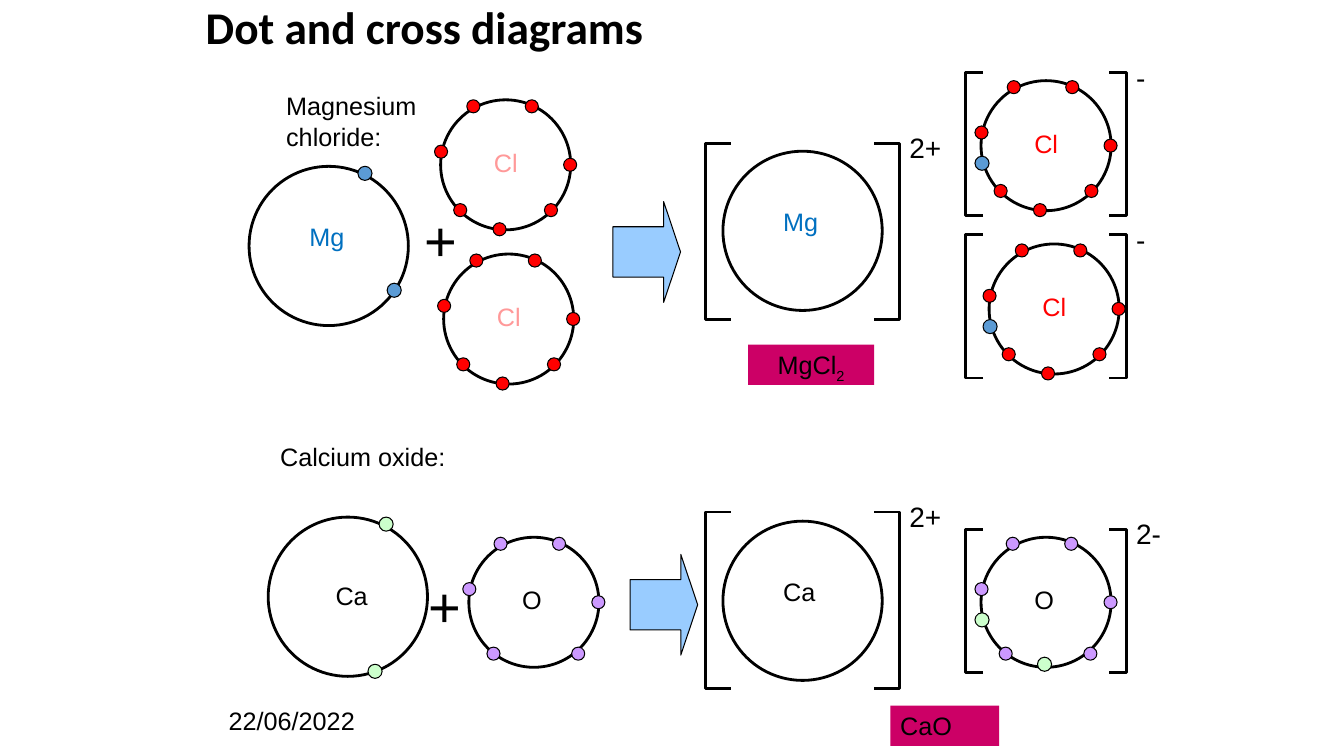
"""Build a slide of dot and cross diagrams for two ionic compounds."""
from dataclasses import dataclass

from pptx import Presentation
from pptx.dml.color import RGBColor
from pptx.enum.shapes import MSO_SHAPE
from pptx.enum.text import MSO_ANCHOR, MSO_AUTO_SIZE, PP_ALIGN
from pptx.util import Inches, Pt

OVAL = MSO_SHAPE.OVAL
RECTANGLE = MSO_SHAPE.RECTANGLE
ARROW = MSO_SHAPE.RIGHT_ARROW
LEFT_BRACKET = MSO_SHAPE.LEFT_BRACKET
RIGHT_BRACKET = MSO_SHAPE.RIGHT_BRACKET
TOP, MIDDLE = MSO_ANCHOR.TOP, MSO_ANCHOR.MIDDLE
LEFT, CENTER = PP_ALIGN.LEFT, PP_ALIGN.CENTER
NO_AUTOFIT = MSO_AUTO_SIZE.NONE

BLACK, RED, PINK, BLUE = "000000", "FF0000", "FF9999", "0070C0"
MAGNESIUM_DOT, CALCIUM_DOT, OXYGEN_DOT = "5B9BD5", "CCFFCC", "CC99FF"
ARROW_FILL, FORMULA_FILL = "99CCFF", "CC0066"

METAL_RING, NONMETAL_RING = 1.58, 1.29
METAL_ELECTRON, NONMETAL_ELECTRON = 0.14, 0.13


@dataclass(frozen=True)
class Electrons:
    """Electrons of one colour, placed from the top left of their ring."""

    color: str
    size: float
    offsets: tuple[tuple[float, float], ...]


@dataclass(frozen=True)
class Atom:
    """A ring with its symbol and its electrons."""

    left: float
    top: float
    ring: float
    symbol: str
    color: str
    label_offset: tuple[float, float]
    electrons: tuple[Electrons, ...] = ()


@dataclass(frozen=True)
class Brackets:
    """A pair of square brackets with a charge at the upper right."""

    left: float
    top: float
    right: float
    width: float
    height: float
    charge: str


@dataclass(frozen=True)
class Caption:
    """A piece of text in a box, on a fill if one is given."""

    text: str
    box: tuple[float, float, float, float]
    size: float = 18
    anchor: MSO_ANCHOR = TOP
    align: PP_ALIGN = LEFT
    fill: str | None = None
    subscript: str = ""


CHLORINE = Electrons(RED, NONMETAL_ELECTRON, (
    (0.26, 0), (0.84, 0), (-0.06, 0.45), (0.13, 1.03), (1.03, 1.03), (1.22, 0.58), (0.52, 1.22)))
OXYGEN = Electrons(OXYGEN_DOT, NONMETAL_ELECTRON, (
    (0.25, 0), (0.83, 0), (-0.06, 0.45), (0.18, 1.09), (1.02, 1.09), (1.22, 0.58)))
MAGNESIUM = Electrons(MAGNESIUM_DOT, METAL_ELECTRON, ((1.08, 0), (1.37, 1.16)))
CALCIUM = Electrons(CALCIUM_DOT, METAL_ELECTRON, ((1.1, 0), (0.99, 1.46)))
FROM_MAGNESIUM = Electrons(MAGNESIUM_DOT, METAL_ELECTRON, ((-0.06, 0.75),))
FROM_CALCIUM = Electrons(CALCIUM_DOT, METAL_ELECTRON, ((0.56, 1.19), (-0.06, 0.75)))

METAL_LABEL, NONMETAL_LABEL = (0.5, 0.5), (0.43, 0.42)
ATOMS = (
    Atom(2.47, 1.65, METAL_RING, "Mg", BLUE, METAL_LABEL, (MAGNESIUM,)),
    Atom(4.37, 0.99, NONMETAL_RING, "Cl", PINK, NONMETAL_LABEL, (CHLORINE,)),
    Atom(4.4, 2.52, NONMETAL_RING, "Cl", PINK, NONMETAL_LABEL, (CHLORINE,)),
    Atom(7.17, 1.5, METAL_RING, "Mg", BLUE, METAL_LABEL),
    Atom(9.73, 0.8, NONMETAL_RING, "Cl", RED, NONMETAL_LABEL, (CHLORINE, FROM_MAGNESIUM)),
    Atom(9.81, 2.42, NONMETAL_RING, "Cl", RED, NONMETAL_LABEL, (CHLORINE, FROM_MAGNESIUM)),
    Atom(2.66, 5.13, METAL_RING, "Ca", BLACK, (0.57, 0.58), (CALCIUM,)),
    Atom(4.65, 5.33, NONMETAL_RING, "O", BLACK, NONMETAL_LABEL, (OXYGEN,)),
    Atom(7.17, 5.17, METAL_RING, "Ca", BLACK, METAL_LABEL),
    Atom(9.73, 5.33, NONMETAL_RING, "O", BLACK, NONMETAL_LABEL, (OXYGEN, FROM_CALCIUM)),
)
BRACKETS = (
    Brackets(7, 1.42, 8.92, 0.25, 1.75, "2+"),
    Brackets(7, 5.08, 8.92, 0.25, 1.75, "2+"),
    Brackets(9.58, 0.72, 11.17, 0.17, 1.42, "-"),
    Brackets(9.58, 2.33, 11.17, 0.17, 1.42, "-"),
    Brackets(9.58, 5.25, 11.17, 0.17, 1.42, "2-"),
)
CAPTIONS = (
    Caption("22/06/2022", (2.17, 6.95, 2.33, 0.4), anchor=MIDDLE),
    Caption("Magnesium chloride:", (2.74, 0.85, 2.17, 0.71)),
    Caption("Calcium oxide:", (2.68, 4.33, 2.67, 0.4)),
    Caption("+", (4.11, 1.99, 0.58, 0.77), size=40),
    Caption("+", (4.15, 5.62, 0.58, 0.77), size=40),
    Caption("MgCl", (7.42, 3.42, 1.25, 0.4), align=CENTER, fill=FORMULA_FILL, subscript="2"),
    Caption("CaO", (8.83, 7, 1.08, 0.4), fill=FORMULA_FILL),
)
ARROWS = ((6.08, 2), (6.25, 5.5))


def rgb(color: str) -> RGBColor:
    """Turn a hex string into a colour."""
    return RGBColor.from_string(color)


def write(shape, text: str, *, size: float = 18, color: str = BLACK, font: str = "Arial",
          bold: bool = False, anchor: MSO_ANCHOR = TOP, align: PP_ALIGN = LEFT,
          spacing: float = 1.0, subscript: str = "") -> None:
    """Put formatted text, with an optional subscript, into a shape."""
    frame = shape.text_frame
    frame.word_wrap = True
    frame.auto_size = NO_AUTOFIT
    frame.vertical_anchor = anchor
    paragraph = frame.paragraphs[0]
    paragraph.alignment = align
    paragraph.line_spacing = spacing
    for content in filter(None, (text, subscript)):
        run = paragraph.add_run()
        run.text = content
        run.font.name, run.font.size, run.font.bold = font, Pt(size), bold
        run.font.color.rgb = rgb(color)
    if subscript:
        run._r.get_or_add_rPr().set("baseline", "-25000")


def add_preset(slide, kind: MSO_SHAPE, left: float, top: float, width: float, height: float,
               *, fill: str | None = None, line: float | None = None):
    """Add a preset shape with a plain fill and a black outline."""
    shape = slide.shapes.add_shape(kind, Inches(left), Inches(top), Inches(width), Inches(height))
    shape.shadow.inherit = False
    if fill:
        shape.fill.solid()
        shape.fill.fore_color.rgb = rgb(fill)
    else:
        shape.fill.background()
    if line:
        shape.line.color.rgb = rgb(BLACK)
        shape.line.width = Pt(line)
    else:
        shape.line.fill.background()
    return shape


def add_caption(slide, caption: Caption, color: str = BLACK) -> None:
    """Add a caption as a text box or as a filled rectangle."""
    if caption.fill:
        shape = add_preset(slide, RECTANGLE, *caption.box, fill=caption.fill)
    else:
        shape = slide.shapes.add_textbox(*map(Inches, caption.box))
    write(shape, caption.text, size=caption.size, color=color, anchor=caption.anchor,
          align=caption.align, subscript=caption.subscript)


def add_atom(slide, atom: Atom) -> None:
    """Draw the ring, symbol and electrons of an atom."""
    add_preset(slide, OVAL, atom.left, atom.top, atom.ring, atom.ring, line=2)
    across, down = atom.label_offset
    add_caption(slide, Caption(atom.symbol, (atom.left + across, atom.top + down, 0.73, 0.4)),
                atom.color)
    for electrons in atom.electrons:
        for across, down in electrons.offsets:
            add_preset(slide, OVAL, atom.left + across, atom.top + down, electrons.size,
                       electrons.size, fill=electrons.color, line=0.75)


def add_brackets(slide, pair: Brackets) -> None:
    """Draw both square brackets and the charge."""
    for kind, left in ((LEFT_BRACKET, pair.left), (RIGHT_BRACKET, pair.right - pair.width)):
        bracket = add_preset(slide, kind, left, pair.top, pair.width, pair.height, line=2)
        bracket.adjustments[0] = 0
    add_caption(slide, Caption(pair.charge, (pair.right, pair.top - 0.17, 0.58, 0.43), size=20))


def main() -> None:
    """Build and save the slide."""
    presentation = Presentation()
    presentation.slide_width, presentation.slide_height = Inches(13.33), Inches(7.5)
    slide = presentation.slides.add_slide(presentation.slide_layouts[5])
    title = slide.shapes.title
    title.left, title.top, title.width, title.height = map(Inches, (1.94, 0, 9, 0.6))
    write(title, "Dot and cross diagrams", size=32.4, font="Calibri", bold=True,
          anchor=MIDDLE, spacing=0.9)
    for caption in CAPTIONS:
        add_caption(slide, caption)
    for left, top in ARROWS:
        arrow = add_preset(slide, ARROW, left, top, 0.67, 1, fill=ARROW_FILL, line=0.75)
        arrow.adjustments[1] = 0.25
    for atom in ATOMS:
        add_atom(slide, atom)
    for pair in BRACKETS:
        add_brackets(slide, pair)
    presentation.save("out.pptx")


if __name__ == "__main__":
    main()
